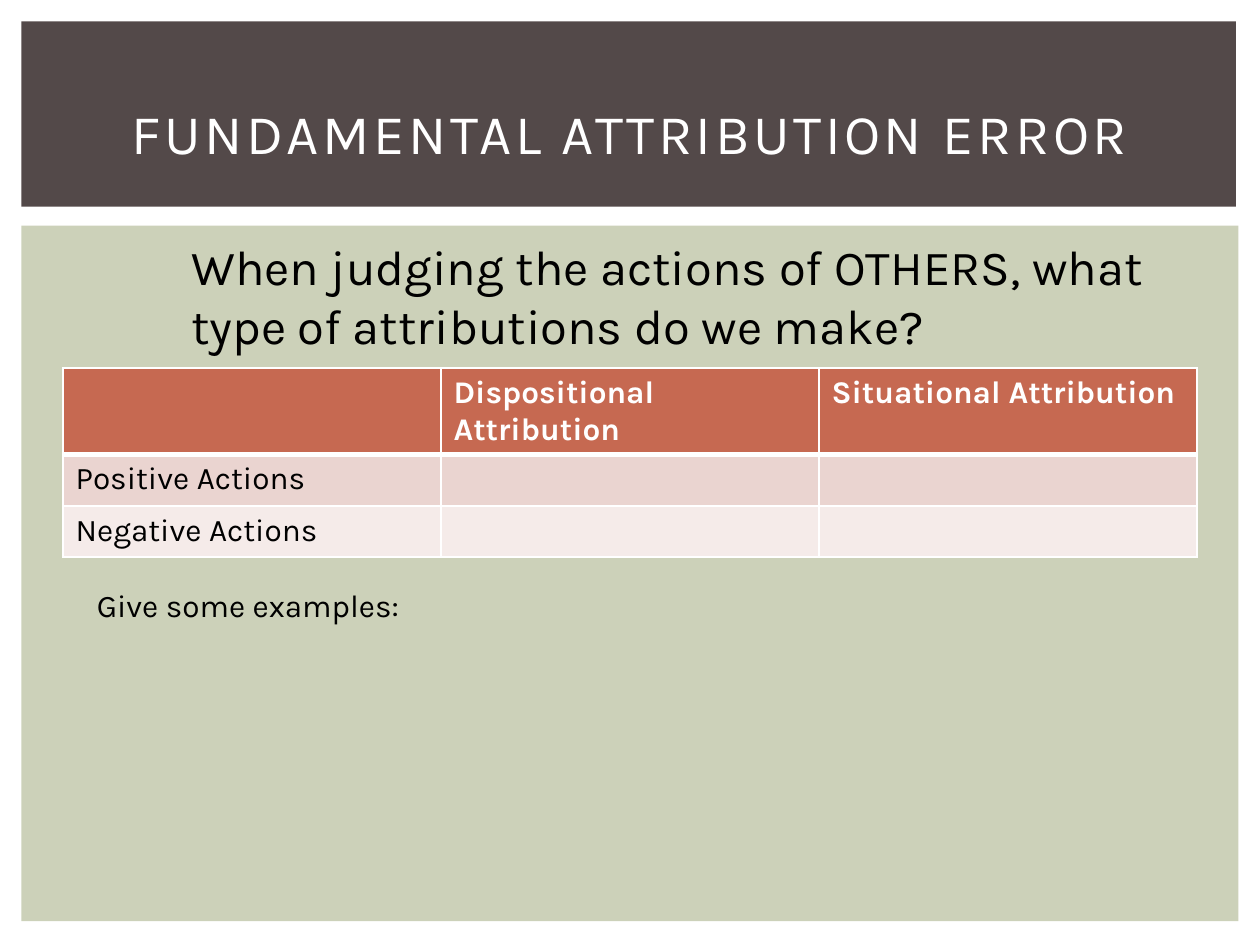
from dataclasses import dataclass

from lxml.etree import SubElement
from pptx import Presentation
from pptx.dml.color import RGBColor
from pptx.enum.shapes import MSO_SHAPE
from pptx.enum.text import MSO_ANCHOR, PP_ALIGN
from pptx.oxml.ns import qn
from pptx.util import Inches, Pt


@dataclass(frozen=True)
class Theme:
    """Colours, font and type sizes of the slide."""
    font: str = "Karla"
    white: str = "FFFFFF"
    black: str = "000000"
    banner: str = "534949"
    panel: str = "CCD1B9"
    header: str = "C66951"
    bands: tuple = ("EAD4D0", "F5EBE9")
    title: int = 32
    question: int = 28
    body: int = 18


THEME = Theme()
ROWS = [
    ("", "Dispositional Attribution", "Situational Attribution"),
    ("Positive Actions", "", ""),
    ("Negative Actions", "", ""),
]


def write(tf, text, size=THEME.body, color=THEME.black, bold=False,
          align=PP_ALIGN.LEFT, anchor=MSO_ANCHOR.TOP, spacing=0):
    """Put formatted text in a text frame."""
    tf.word_wrap = True
    tf.vertical_anchor = anchor
    p = tf.paragraphs[0]
    p.alignment = align
    r = p.add_run()
    r.text = text
    r.font.name = THEME.font
    r.font.size = Pt(size)
    r.font.bold = bold
    r.font.color.rgb = RGBColor.from_string(color)
    if spacing:
        r._r.get_or_add_rPr().set("spc", str(spacing * 100))


def add_text(s, box, text, **fmt):
    """Add a text box at the given box."""
    sp = s.shapes.add_textbox(*map(Inches, box))
    write(sp.text_frame, text, **fmt)


def add_block(s, box, color):
    """Add a plain filled rectangle."""
    sp = s.shapes.add_shape(MSO_SHAPE.RECTANGLE, *map(Inches, box))
    sp.shadow.inherit = False
    sp.fill.solid()
    sp.fill.fore_color.rgb = RGBColor.from_string(color)
    sp.line.fill.background()


def set_borders(cell, **widths):
    """Draw white cell borders, one point wide unless a side says otherwise."""
    tc_pr = cell._tc.get_or_add_tcPr()
    for side in "LRTB":
        ln = SubElement(tc_pr, qn(f"a:ln{side}"), w=str(Pt(widths.get(side, 1))))
        fill = SubElement(ln, qn("a:solidFill"))
        SubElement(fill, qn("a:srgbClr"), val=THEME.white)


def add_banner(s, box):
    """Add the dark banner with the slide title."""
    left, top, width, height = box
    add_block(s, box, THEME.banner)
    add_text(s, (left + 0.33, top + 0.25, width - 0.64, height - 0.22),
             "FUNDAMENTAL ATTRIBUTION ERROR", size=THEME.title, color=THEME.white,
             align=PP_ALIGN.CENTER, anchor=MSO_ANCHOR.MIDDLE, spacing=2)


def add_attribution_table(s, box, heights):
    """Add the table of actions against attribution types."""
    frame = s.shapes.add_table(len(ROWS), len(ROWS[0]), *map(Inches, box))
    table = frame.table
    table.horz_banding = False
    fills = (THEME.header, *THEME.bands)
    rules = ({"B": 3}, {"T": 3}, {})
    for i, texts in enumerate(ROWS):
        table.rows[i].height = Inches(heights[i])
        for j, text in enumerate(texts):
            cell = table.cell(i, j)
            set_borders(cell, **rules[i])
            cell.fill.solid()
            cell.fill.fore_color.rgb = RGBColor.from_string(fills[i])
            if text:
                write(cell.text_frame, text, bold=i == 0,
                      color=THEME.black if i else THEME.white)


def add_content(s, box):
    """Add the green panel with the question, table and prompt."""
    left, top, width, height = box
    add_block(s, box, THEME.panel)
    add_attribution_table(s, (left + 0.33, top + 1.13, 9, 1.49), (0.68, 0.41, 0.4))
    add_text(s, (left + 1.25, top + 0.04, 7.75, 1.04),
             "When judging the actions of OTHERS, what type of attributions do we make?",
             size=THEME.question)
    add_text(s, (left + 0.5, top + 2.81, 3.17, 0.4), "Give some examples:")


def main():
    """Build and save the slide."""
    prs = Presentation()
    prs.slide_width, prs.slide_height = Inches(10), Inches(7.5)
    s = prs.slides.add_slide(prs.slide_layouts[6])
    add_content(s, (0.17, 1.79, 9.66, 5.52))
    add_banner(s, (0.17, 0.17, 9.64, 1.47))
    prs.save("out.pptx")


if __name__ == "__main__":
    main()
